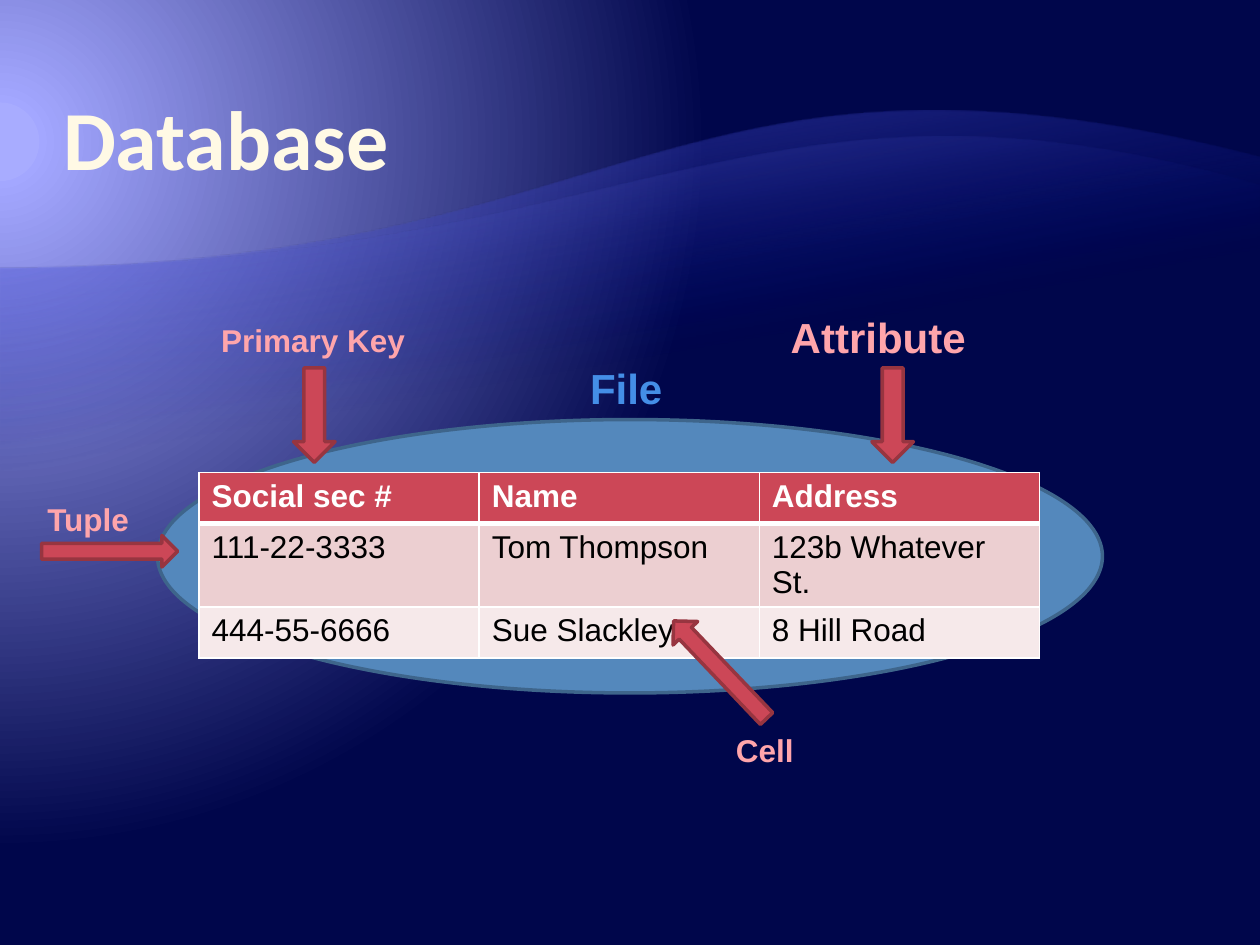
from lxml import etree
from pptx import Presentation
from pptx import util as u
from pptx.dml.color import RGBColor
from pptx.enum import shapes, text
from pptx.oxml import ns

COLORS = {
    "glow": "A8ACFF", "halo": "A3A7FF", "night": "00064B",
    "deep": "000D9E", "violet": "797FFF",
    "cream": "FFF9E5", "khaki": "8F8462", "white": "FFFFFF", "black": "000000",
    "blue": "5488BC", "blue_edge": "3E658B", "red": "CC4757", "red_edge": "973540",
    "row_dark": "ECCFD1", "row_light": "F6E9EA",
    "blush": "FFBDC1", "pink": "FFA5AB", "maroon": "890010", "rose": "C73D4E",
    "navy": "104477", "sky": "448EE7", "ice": "EEF3FD",
}
DOWN = '<a:lin ang="5400000" scaled="0"/>'
UP = '<a:lin ang="15600000" scaled="0"/>'
CIRCLE = ('<a:path path="circle"><a:fillToRect l="20000" t="30000" r="135000" '
          'b="100000"/></a:path>')
PINK_TEXT = [(0, "blush"), (9, "pink"), (50, "maroon"), (79, "pink"), (100, "blush")]
BLUE_TEXT = [(0, "navy"), (78, "sky"), (100, "ice")]


class Canvas:
    """Holds the style and the current slide, and draws each kind of element."""

    def __init__(self, page):
        self.page = page
        self.body_font = {"name": "Arial", "size": u.Pt(18)}
        self.title_font = {"name": "Calibri", "size": u.Pt(48), "bold": True}

    def rgb(self, name):
        return RGBColor.from_string(COLORS[name])

    def apply(self, target, values):
        for name, value in values.items():
            setattr(target, name, value)

    def inches(self, *lengths):
        return [u.Inches(length) for length in lengths]

    def xml(self, markup):
        head, rest = markup.split(" ", 1) if " " in markup.split(">")[0] else (
            markup.split(">")[0], ">" + markup.split(">", 1)[1])
        return etree.fromstring(f"{head} {ns.nsdecls('a')} {rest}")

    def gradient(self, stops, direction):
        marks = "".join(
            f'<a:gs pos="{spot * 1000}"><a:srgbClr val="{COLORS[color]}">'
            f'<a:alpha val="{(alpha or [100])[0] * 1000}"/></a:srgbClr></a:gs>'
            for spot, color, *alpha in stops)
        return self.xml(f'<a:gradFill rotWithShape="1"><a:gsLst>{marks}</a:gsLst>'
                        f'{direction}</a:gradFill>')

    def line(self, tag, color, points):
        return self.xml(f'<a:{tag} w="{u.Pt(points)}"><a:solidFill><a:srgbClr '
                        f'val="{COLORS[color]}"/></a:solidFill></a:{tag}>')

    def swap_fill(self, parent, fill):
        parent.replace(parent.find(ns.qn("a:solidFill")), fill)

    def background(self, stops):
        self.page.background.fill.solid()
        holder = self.page.element.find(".//" + ns.qn("p:bgPr"))
        self.swap_fill(holder, self.gradient(stops, CIRCLE))

    def wave(self, curve, bottom, stops, depth):
        steps = 60
        points = []
        for step in range(steps + 1):
            t = step / steps
            weights = ((1 - t) ** 3, 3 * t * (1 - t) ** 2, 3 * t * t * (1 - t), t ** 3)
            points.append([u.Inches(sum(w * point[axis] for w, point in zip(weights, curve)))
                           for axis in (0, 1)])
        builder = self.page.shapes.build_freeform(*points[0])
        builder.add_line_segments(points[1:] + [self.inches(10, bottom),
                                                self.inches(0, bottom)], close=True)
        shape = builder.convert_to_shape()
        shape.shadow.inherit = False
        shape.line.fill.background()
        shape.fill.solid()
        self.swap_fill(shape.element.spPr, self.gradient(stops, UP))
        self.page.shapes.element.insert(2 + depth, shape.element)

    def title(self, words, *place):
        box = self.page.shapes.title
        self.apply(box, dict(zip(("left", "top", "width", "height"), self.inches(*place))))
        self.apply(box.text_frame, {
            "vertical_anchor": text.MSO_ANCHOR.BOTTOM, "margin_left": 0, "margin_right": 0,
            "margin_top": u.Inches(0.01), "margin_bottom": u.Inches(0.01)})
        para = box.text_frame.paragraphs[0]
        para.alignment = text.PP_ALIGN.LEFT
        span = para.add_run()
        span.text = words
        self.apply(span.font, self.title_font)
        span.font.color.rgb = self.rgb("cream")
        span.font._element.insert(0, self.line("ln", "khaki", 0.04))

    def shape(self, kind, place, fill, edge, rotation=0):
        shape = self.page.shapes.add_shape(kind, *self.inches(*place))
        shape.shadow.inherit = False
        shape.rotation = rotation
        shape.fill.solid()
        shape.fill.fore_color.rgb = self.rgb(fill)
        shape.line.color.rgb = self.rgb(edge)
        shape.line.width = u.Pt(2)

    def arrow(self, kind, *place, rotation=0):
        self.shape(kind, place, "red", "red_edge", rotation)

    def label(self, words, *place, size=18, stops=PINK_TEXT, outline="rose"):
        box = self.page.shapes.add_textbox(*self.inches(*place))
        self.apply(box.text_frame, {"word_wrap": False,
                                    "auto_size": text.MSO_AUTO_SIZE.SHAPE_TO_FIT_TEXT})
        para = box.text_frame.paragraphs[0]
        para.alignment = text.PP_ALIGN.CENTER
        span = para.add_run()
        span.text = words
        self.apply(span.font, {**self.body_font, "size": u.Pt(size), "bold": True})
        span.font.fill.solid()
        self.swap_fill(span.font._element, self.gradient(stops, DOWN))
        if outline:
            span.font._element.insert(0, self.line("ln", outline, 0.83))

    def table(self, rows, fills, *place):
        frame = self.page.shapes.add_table(len(rows), len(rows[0]), *self.inches(*place))
        for r, (row, fill) in enumerate(zip(rows, fills)):
            for c, words in enumerate(row):
                cell = frame.table.cell(r, c)
                cell.fill.solid()
                cell.fill.fore_color.rgb = self.rgb(fill)
                span = cell.text_frame.paragraphs[0].add_run()
                span.text = words
                self.apply(span.font, {**self.body_font, "bold": r == 0})
                span.font.color.rgb = self.rgb("black" if r else "white")
                widths = {"lnL": 1, "lnR": 1, "lnT": 3 if r == 1 else 1,
                          "lnB": 1 if r else 3}
                for spot, (tag, points) in enumerate(widths.items()):
                    cell._tc.tcPr.insert(spot, self.line(tag, "white", points))


def main():
    deck = Presentation()
    deck.slide_width, deck.slide_height = u.Inches(10), u.Inches(7.5)
    canvas = Canvas(deck.slides.add_slide(deck.slide_layouts[5]))
    kinds = shapes.MSO_SHAPE

    canvas.background([(5, "glow"), (5, "halo"), (90, "night")])
    canvas.wave([(0, 2.13), (5, 2.13), (5.34, 0.05), (10, 1.25)], 7.33,
                [(65, "deep", 0), (100, "violet", 55)], 0)
    canvas.wave([(0, 2.13), (5, 2.13), (5.98, 0.31), (10, 1.47)], 6.37,
                [(65, "deep", 0), (100, "halo", 30)], 1)
    canvas.title("Database", 0.5, 0.58, 9, 0.92)

    canvas.shape(kinds.OVAL, (1.25, 3.33, 7.5, 2.17), "blue", "blue_edge")
    canvas.table([("Social sec #", "Name", "Address"),
                  ("111-22-3333", "Tom Thompson", "123b Whatever St."),
                  ("444-55-6666", "Sue Slackley", "8 Hill Road")],
                 ("red", "row_dark", "row_light"), 1.58, 3.75, 6.67, 1.22)

    for left in (2.33, 6.92):
        canvas.arrow(kinds.DOWN_ARROW, left, 2.92, 0.33, 0.75)
    canvas.arrow(kinds.RIGHT_ARROW, 0.33, 4.25, 1.08, 0.25)
    canvas.arrow(kinds.RIGHT_ARROW, 5.18, 5.18, 1.07, 0.27, rotation=226.4)

    canvas.label("Attribute", 6.17, 2.42, 1.6, 0.5, size=24)
    canvas.label("Tuple", 0.27, 3.92, 0.86, 0.4)
    canvas.label("Cell", 5.74, 5.75, 0.66, 0.4)
    canvas.label("Primary Key", 1.65, 2.5, 1.67, 0.4)
    canvas.label("File", 4.58, 2.83, 0.78, 0.5, size=24, stops=BLUE_TEXT, outline=None)
    deck.save("out.pptx")


if __name__ == "__main__":
    main()
